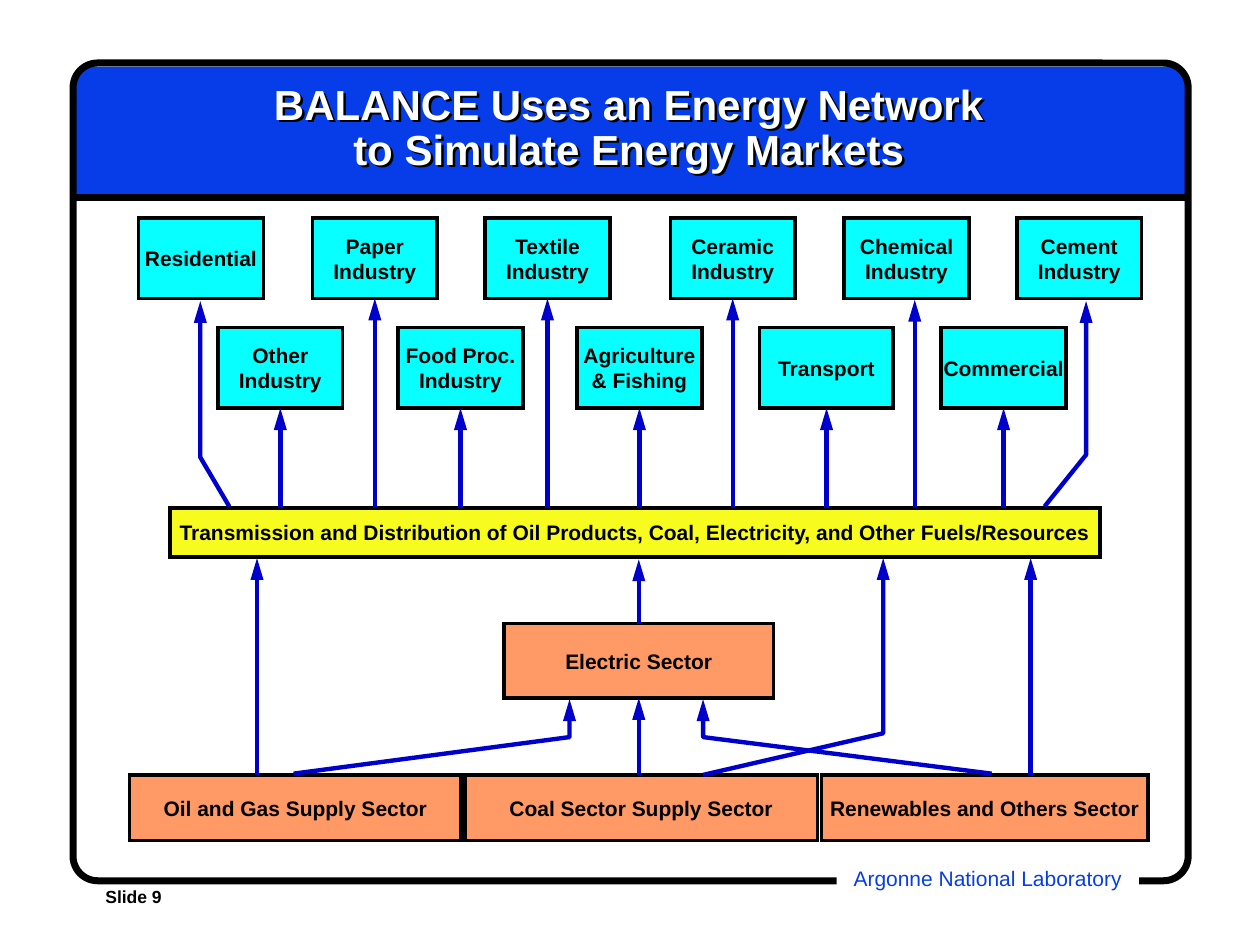
from lxml.etree import SubElement
from pptx import Presentation
from pptx.dml.color import RGBColor
from pptx.enum.shapes import MSO_CONNECTOR, MSO_SHAPE
from pptx.enum.text import MSO_ANCHOR, PP_ALIGN
from pptx.oxml.ns import qn
from pptx.util import Inches, Pt

color = RGBColor.from_string
BLACK, WHITE, BLUE, ARROW_BLUE = "000000", "FFFFFF", "063DE8", "0000CC"
CYAN, YELLOW, ORANGE = "07FFFF", "F7FC1E", "FF9966"
BOTTOM, TOP = 2, 0

presentation = Presentation()
presentation.slide_width = Inches(10)
presentation.slide_height = Inches(7.5)
slide = presentation.slides.add_slide(presentation.slide_layouts[5])
shapes = slide.shapes


def add_box(text, left, top, width, height, fill, line_width=2, kind=MSO_SHAPE.RECTANGLE):
    """Add a box with bold centred text; no fill or line where None."""
    box = shapes.add_shape(kind, Inches(left), Inches(top), Inches(width), Inches(height))
    box.shadow.inherit = False
    if fill:
        box.fill.solid()
        box.fill.fore_color.rgb = color(fill)
    else:
        box.fill.background()
    if line_width:
        box.line.color.rgb = color(BLACK)
        box.line.width = Pt(line_width)
        SubElement(box.element.spPr.find(qn("a:ln")), qn("a:miter"), lim="800000")
    else:
        box.line.fill.background()
    if text:
        frame = box.text_frame
        frame.text = text
        frame.word_wrap = False
        frame.vertical_anchor = MSO_ANCHOR.MIDDLE
        for paragraph in frame.paragraphs:
            paragraph.alignment = PP_ALIGN.CENTER
            paragraph.font.name = "Arial"
            paragraph.font.size = Pt(12)
            paragraph.font.bold = True
            paragraph.font.color.rgb = color(BLACK)
    return box


def add_arrow(points, source=None, target=None):
    """Add an arrow along points in inches, joined to boxes where given."""
    corners = [(Inches(x), Inches(y)) for x, y in points]
    if len(corners) == 2:
        arrow = shapes.add_connector(MSO_CONNECTOR.STRAIGHT, *corners[0], *corners[1])
        if source:
            arrow.begin_connect(source, TOP)
        if target:
            arrow.end_connect(target, BOTTOM)
    else:
        builder = shapes.build_freeform(*corners[0])
        builder.add_line_segments(corners[1:], close=False)
        arrow = builder.convert_to_shape()
        arrow.fill.background()
    arrow.line.color.rgb = color(ARROW_BLUE)
    arrow.line.width = Pt(2.5)
    properties = arrow.element.spPr
    SubElement(properties.find(qn("a:ln")), qn("a:tailEnd"), type="triangle", w="med", len="lg")
    SubElement(properties, qn("a:effectLst"))


# Frame and title band
band = add_box("", 0.57, 0.53, 8.87, 1.06, BLUE, None, MSO_SHAPE.ROUNDED_RECTANGLE)
band.adjustments[0] = 0.13
border = add_box("", 0.58, 0.5, 8.85, 6.49, None, 4, MSO_SHAPE.ROUNDED_RECTANGLE)
border.adjustments[0] = 0.03
rule = shapes.add_connector(
    MSO_CONNECTOR.STRAIGHT, Inches(0.58), Inches(1.57), Inches(9.44), Inches(1.57))
rule.line.color.rgb = color(BLACK)
rule.line.width = Pt(4)
SubElement(rule.element.spPr, qn("a:effectLst"))

# Footer
slide_label = add_box("Slide 9", 0.44, 6.98, 1.24, 0.27, None, None)
slide_label.text_frame.paragraphs[0].font.size = Pt(10)
laboratory = add_box("Argonne National Laboratory", 6.64, 6.82, 2.4, 0.3, WHITE, None)
laboratory_font = laboratory.text_frame.paragraphs[0].font
laboratory_font.bold = False
laboratory_font.color.rgb = color(BLUE)

# Title with a text shadow, brought in front of the band
title = shapes.title
title.left, title.top = Inches(0.56), Inches(0.51)
title.width, title.height = Inches(8.86), Inches(1.03)
title.text_frame.text = "BALANCE Uses an Energy Network\vto Simulate Energy Markets"
title.text_frame.vertical_anchor = MSO_ANCHOR.MIDDLE
paragraph = title.text_frame.paragraphs[0]
paragraph.alignment = PP_ALIGN.CENTER
paragraph.line_spacing = 0.9
paragraph.font.name = "Arial"
paragraph.font.size = Pt(24)
paragraph.font.bold = True
paragraph.font.color.rgb = color(WHITE)
title.fill.background()
effects = SubElement(title.element.spPr, qn("a:effectLst"))
shadow = SubElement(effects, qn("a:outerShdw"), dist="25400", dir="2700000")
SubElement(shadow, qn("a:srgbClr"), val=BLACK)
title.element.getparent().append(title.element)

# Transmission and distribution bar
bar_top = 4.03
add_box("Transmission and Distribution of Oil Products, Coal, Electricity, "
        "and Other Fuels/Resources", 1.35, bar_top, 7.38, 0.39, YELLOW)

# Demand sectors: text, left, width, and whether a straight arrow meets the middle
demand_rows = {
    1.73: [("Residential", 1.1, 0.99, False), ("Paper\vIndustry", 2.48, 0.99, True),
           ("Textile\nIndustry", 3.85, 0.99, True), ("Ceramic\nIndustry", 5.32, 0.99, True),
           ("Chemical\nIndustry", 6.7, 0.99, False), ("Cement\nIndustry", 8.07, 0.99, False)],
    2.6: [("Other\nIndustry", 1.73, 0.99, True), ("Food Proc.\nIndustry", 3.16, 0.99, True),
          ("Agriculture\n& Fishing", 4.58, 0.99, True), ("Transport", 6.03, 1.06, True),
          ("Commercial", 7.47, 0.99, True)],
}
for top, sectors in demand_rows.items():
    for text, left, width, has_arrow in sectors:
        box = add_box(text, left, top, width, 0.64, CYAN)
        if has_arrow:
            middle = left + width / 2
            add_arrow([(middle, bar_top), (middle, top + 0.64)], target=box)

# Demand arrows that miss the middle or bend
add_arrow([(7.26, bar_top), (7.26, 2.38)])
add_arrow([(1.82, 4.02), (1.59, 3.63), (1.59, 2.39)])
add_arrow([(8.29, 4.02), (8.62, 3.61), (8.62, 2.39)])

# Supply sectors
supply_top = 6.15
electric = add_box("Electric Sector", 4, 4.95, 2.14, 0.59, ORANGE)
for text, left, width in [("Oil and Gas Supply Sector", 1.03, 2.63),
                          ("Coal Sector Supply Sector", 3.69, 2.8),
                          ("Renewables and Others Sector", 6.52, 2.59)]:
    add_box(text, left, supply_top, width, 0.52, ORANGE)

# Supply arrows
add_arrow([(2.33, 6.14), (4.52, 5.85), (4.52, 5.55)])
add_arrow([(7.87, 6.14), (5.58, 5.85), (5.58, 5.55)])
add_arrow([(5.58, supply_top), (7.01, 5.82), (7.01, 4.43)])
add_arrow([(5.07, supply_top), (5.07, 5.54)], target=electric)
add_arrow([(5.07, 4.95), (5.07, 4.44)], source=electric)
for x in (2.04, 8.18):
    add_arrow([(x, supply_top), (x, 4.43)])

presentation.save("out.pptx")
